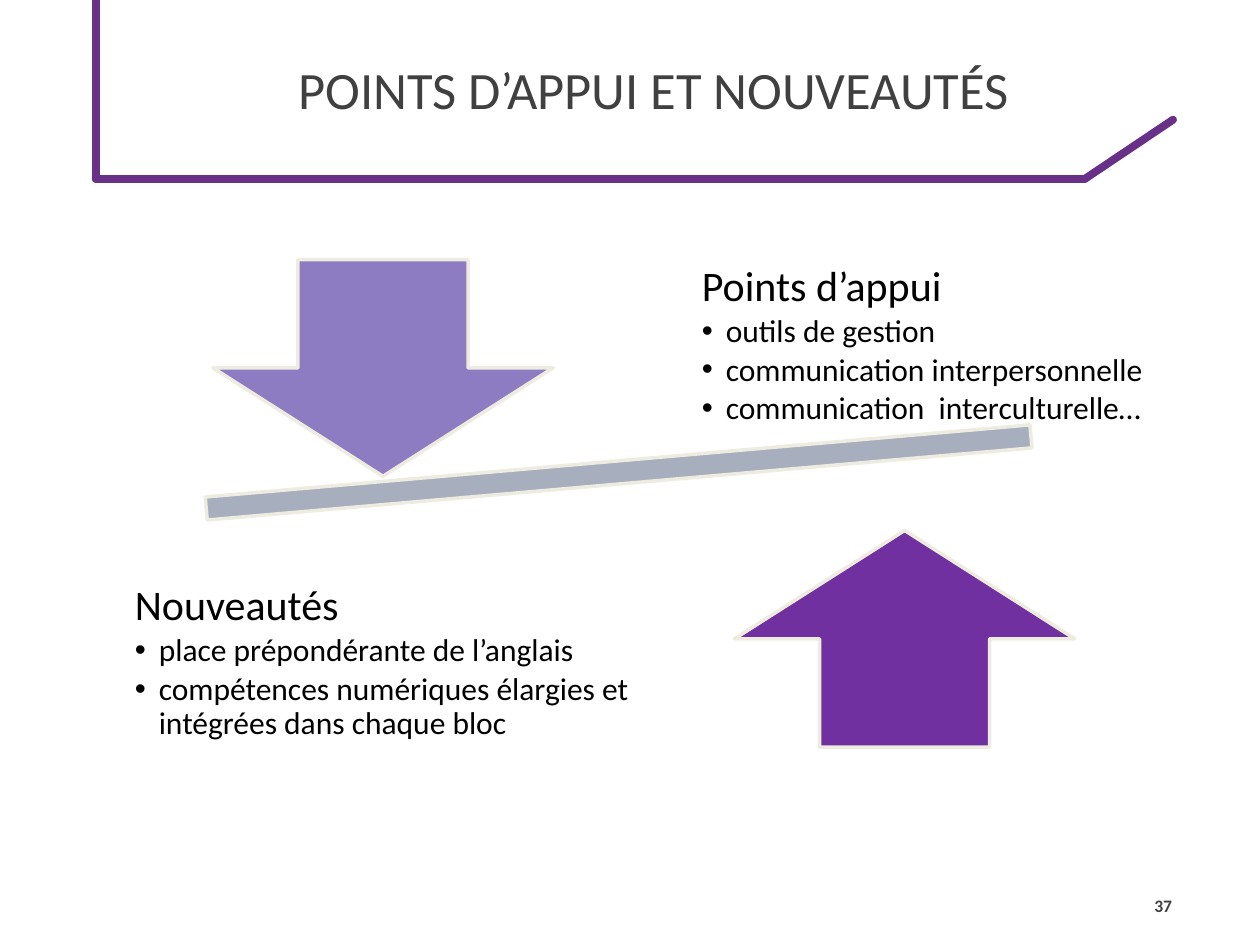
from pptx import Presentation
from pptx.dml.color import RGBColor
from pptx.enum.shapes import MSO_CONNECTOR as Conn, MSO_SHAPE as Kind
from pptx.enum.text import MSO_ANCHOR as Anchor, MSO_AUTO_SIZE as Fit, PP_ALIGN as Align
from pptx.oxml.ns import qn
from pptx.util import Inches, Pt
from lxml.etree import SubElement as Sub


def paint(part, tone):
    if hasattr(part, "solid"):
        part.solid()
        part = part.fore_color
    part.rgb = RGBColor.from_string(tone)


def write(par, text, size, tone, bold=False):
    run = par.add_run()
    run.text = text
    run.font.name = "Calibri"
    run.font.size = Pt(size)
    run.font.bold = bold
    paint(run.font.color, tone)


deck = Presentation()
deck.slide_width = Inches(10)
deck.slide_height = Inches(7.5)
slide = deck.slides.add_slide(deck.slide_layouts[3])
items = slide.shapes
title, right, left = slide.placeholders

title.left, title.top = Inches(0.88), Inches(0)
title.width, title.height = Inches(8.62), Inches(1.41)
frame = title.text_frame
frame.auto_size = Fit.NONE
frame.vertical_anchor = Anchor.MIDDLE
par = frame.paragraphs[0]
par.alignment = Align.CENTER
write(par, "POINTS D’APPUI ET NOUVEAUTÉS", 30, "404040")

for x1, y1, x2, y2 in [(0.76, 1.42, 8.61, 1.42),
                       (8.61, 1.42, 9.31, 0.95),
                       (0.76, 1.42, 0.76, 0)]:
    rule = items.add_connector(Conn.STRAIGHT, Inches(x1), Inches(y1), Inches(x2), Inches(y2))
    paint(rule.line.fill, "683086")
    rule.line.width = Pt(4.5)
    rule.line._get_or_add_ln().set("cap", "rnd")
    Sub(rule._element.spPr, qn("a:effectLst"))

for kind, x, y, w, h, tone, turn, adj in [
        (Kind.MATH_MINUS, 0.44, 3.36, 8.94, 0.78, "A7AFBE", 355, [0.235]),
        (Kind.DOWN_ARROW, 1.69, 2.06, 2.7, 1.72, "8E7CC3", 0, [0.5, 0.5]),
        (Kind.UP_ARROW, 5.83, 4.21, 2.7, 1.72, "7030A0", 0, [0.5, 0.5])]:
    shape = items.add_shape(kind, Inches(x), Inches(y), Inches(w), Inches(h))
    shape.shadow.inherit = False
    shape.rotation = turn
    for i, value in enumerate(adj):
        shape.adjustments[i] = value
    paint(shape.fill, tone)
    paint(shape.line.fill, "EEECE0")
    shape.line.width = Pt(2)
    Sub(shape.line._get_or_add_ln(), qn("a:round"))

for body, x, y, w, h, head, points in [
        (right, 5.38, 1.84, 4.12, 1.81, "Points d’appui",
         ["outils de gestion", "communication interpersonnelle",
          "communication  interculturelle…"]),
        (left, 0.88, 4.34, 5.22, 1.84, "Nouveautés",
         ["place prépondérante de l’anglais",
          "compétences numériques élargies et intégrées dans chaque bloc"])]:
    body.left, body.top = Inches(x), Inches(y)
    body.width, body.height = Inches(w), Inches(h)
    frame = body.text_frame
    frame.auto_size = Fit.NONE
    frame.vertical_anchor = Anchor.MIDDLE
    frame.margin_left = frame.margin_right = Inches(0.19)
    frame.margin_top = frame.margin_bottom = Inches(0.19)
    for i, text in enumerate([head] + points):
        par = frame.add_paragraph() if i else frame.paragraphs[0]
        par.level = 1 if i else 0
        par.line_spacing = 0.9
        par.space_before = Pt(2.7 if i else 0)
        par.space_after = Pt(0)
        props = par._p.get_or_add_pPr()
        dent = Inches(0.19) if i else 0
        props.set("marL", str(dent))
        props.set("indent", str(-dent))
        if i:
            Sub(props, qn("a:buFont")).set("typeface", "Arial")
            Sub(props, qn("a:buChar")).set("char", "•")
        else:
            Sub(props, qn("a:buNone"))
        write(par, text, 18 if i else 24, "000000")

page = items.add_textbox(Inches(8.91), Inches(6.99), Inches(0.49), Inches(0.4))
frame = page.text_frame
frame.word_wrap = True
frame.vertical_anchor = Anchor.MIDDLE
par = frame.paragraphs[0]
par.alignment = Align.RIGHT
write(par, "37", 10, "404040", True)

deck.save("out.pptx")
